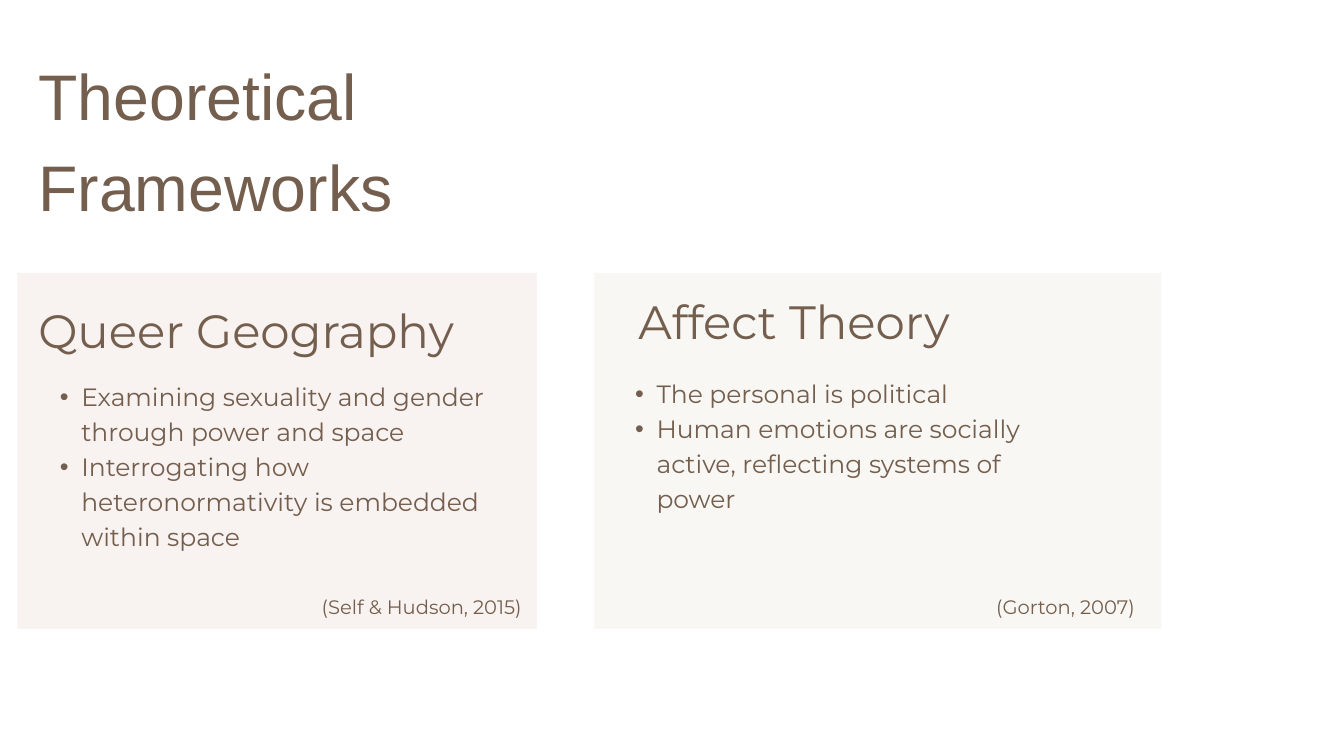
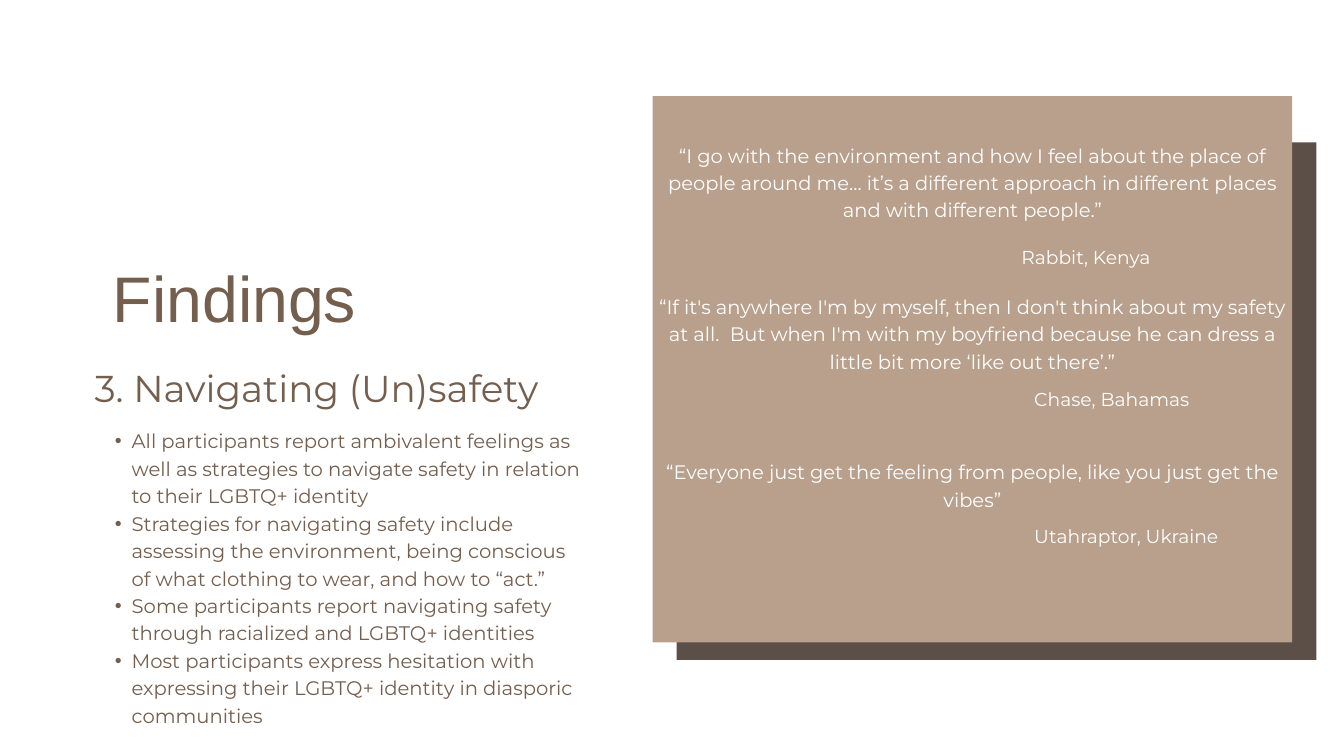
from collections import namedtuple

from lxml import etree
from pptx import Presentation
from pptx.dml.color import RGBColor
from pptx.enum.shapes import MSO_SHAPE
from pptx.enum.text import MSO_ANCHOR, MSO_AUTO_SIZE, PP_ALIGN
from pptx.oxml.ns import qn
from pptx.util import Emu, Pt

RECTANGLE = MSO_SHAPE.RECTANGLE
TOP = MSO_ANCHOR.TOP
NO_AUTOFIT = MSO_AUTO_SIZE.NONE
LEFT, CENTER = PP_ALIGN.LEFT, PP_ALIGN.CENTER

PX = 9144  # 100 px to the inch
PAGE_WIDTH, PAGE_HEIGHT = 2000, 1125
TITLE_ONLY = 5

COLORS = {
    "text": "745E4D",
    "white": "FFFFFF",
    "rose": "F8F2F0",
    "ivory": "F8F7F4",
    "tan": "B8A08C",
    "umber": "5B4F47",
}

# Font, size and line height in points
Style = namedtuple("Style", "font size leading color align", defaults=("text", LEFT))
TITLE = Style("Arial", 69, 96.6)
CARD_HEADING = Style("Montserrat", 50, 70)
CARD_BULLET = Style("Montserrat", 26.8, 37.6)
CITATION = Style("Montserrat", 20.9, 29.3, align=CENTER)
SUBHEADING = Style("Montserrat", 40, 56)
FINDING = Style("Montserrat", 21, 29.4)
QUOTE = Style("Montserrat", 20.9, 29.3, "white", CENTER)
SPEAKER = Style("Montserrat", 20, 28, "white")

Box = namedtuple("Box", "left top width height")


def inside(box, left, top, width, height):
    """Return a box placed relative to the corner of another."""
    return Box(box.left + left, box.top + top, width, height)


def emu(box):
    return [Emu(length * PX) for length in box]


def rgb(name):
    return RGBColor.from_string(COLORS[name])


def add_panel(page, box, color):
    panel = page.shapes.add_shape(RECTANGLE, *emu(box))
    panel.shadow.inherit = False
    panel.fill.solid()
    panel.fill.fore_color.rgb = rgb(color)
    panel.line.fill.background()


def add_bullet(para, indent):
    properties = para._p.get_or_add_pPr()
    properties.set("marL", str(indent * PX))
    properties.set("indent", str(-indent * PX // 2))
    etree.SubElement(properties, qn("a:buFont")).set("typeface", "Arial")
    etree.SubElement(properties, qn("a:buChar")).set("char", "•")


def write(frame, lines, style, indent=0):
    """Fill a text frame with one paragraph a line, bulleted when indented."""
    frame.margin_left = frame.margin_top = 0
    frame.margin_right = frame.margin_bottom = 0
    frame.word_wrap = True
    frame.auto_size = NO_AUTOFIT
    frame.vertical_anchor = TOP
    for number, line in enumerate(lines):
        para = frame.add_paragraph() if number else frame.paragraphs[0]
        para.alignment = style.align
        para.line_spacing = Pt(style.leading)
        para.space_before = para.space_after = Pt(0)
        if indent:
            add_bullet(para, indent)
        span = para.add_run()
        span.text = line
        span.font.name = style.font
        span.font.size = Pt(style.size)
        span.font.color.rgb = rgb(style.color)


def add_text(page, box, lines, style, indent=0):
    write(page.shapes.add_textbox(*emu(box)).text_frame, lines, style, indent)


def add_page(deck, title, box):
    page = deck.slides.add_slide(deck.slide_layouts[TITLE_ONLY])
    holder = page.shapes.title
    holder.left, holder.top, holder.width, holder.height = emu(box)
    write(holder.text_frame, [title], TITLE)
    return page


def add_theory_card(page, box, color, heading, heading_at, bullets, bullets_at,
                    citation, citation_left, citation_width):
    add_panel(page, box, color)
    add_text(page, inside(box, *heading_at, 711, 93), [heading], CARD_HEADING)
    add_text(page, inside(box, *bullets_at, 689, 259), bullets, CARD_BULLET, 64)
    add_text(page, inside(box, citation_left, 473, citation_width, 39),
             [citation], CITATION)


def add_quote_panel(page, box, quotes):
    # Offset backing, then the panel in front of it
    add_panel(page, inside(box, 36, 69, box.width, 770), "umber")
    add_panel(page, box, "tan")
    for quote, quote_top, speaker, speaker_left, speaker_top in quotes:
        add_text(page, inside(box, 0, quote_top, box.width, 120), [quote], QUOTE)
        add_text(page, inside(box, speaker_left, speaker_top, 348, 37),
                 [speaker], SPEAKER)


def build_frameworks(deck):
    page = add_page(deck, "Theoretical Frameworks", Box(57, 65, 689, 262))
    add_theory_card(
        page, Box(26, 406, 773, 530), "rose",
        "Queer Geography", (31, 29),
        ["Examining sexuality and gender through power and space",
         "Interrogating how heteronormativity is embedded within space"], (31, 154),
        "(Self & Hudson, 2015)", 443, 317)
    add_theory_card(
        page, Box(884, 406, 844, 530), "ivory",
        "Affect Theory", (66, 16),
        ["The personal is political",
         "Human emotions are socially active, reflecting systems of power"], (29, 150),
        "(Gorton, 2007)", 574, 255)


def build_findings(deck):
    page = add_page(deck, "Findings", Box(168, 365, 396, 129))
    add_quote_panel(page, Box(971, 143, 952, 813), [
        ("“I go with the environment and how I feel about the place of people "
         "around me… it’s a different approach in different places and with "
         "different people.”", 65, "Rabbit, Kenya", 549, 217),
        ("“If it's anywhere I'm by myself, then I don't think about my safety at "
         "all.  But when I'm with my boyfriend because he can dress a little bit "
         "more ‘like out there’.”", 290, "Chase, Bahamas", 568, 428),
        ("“Everyone just get the feeling from people, like you just get the vibes”",
         536, "Utahraptor, Ukraine", 568, 633),
    ])
    # Theme and its findings
    add_text(page, Box(141, 533, 820, 74), ["3. Navigating (Un)safety"], SUBHEADING)
    add_text(page, Box(146, 633, 723, 445), [
        "All participants report ambivalent feelings as well as strategies to "
        "navigate safety in relation to their LGBTQ+ identity",
        "Strategies for navigating safety include assessing the environment, being "
        "conscious of what clothing to wear, and how to “act.”",
        "Some participants report navigating safety through racialized and LGBTQ+ "
        "identities",
        "Most participants express hesitation with expressing their LGBTQ+ identity "
        "in diasporic communities",
    ], FINDING, 50)


def main():
    deck = Presentation()
    deck.slide_width = Emu(PAGE_WIDTH * PX)
    deck.slide_height = Emu(PAGE_HEIGHT * PX)
    build_frameworks(deck)
    build_findings(deck)
    deck.save("out.pptx")


if __name__ == "__main__":
    main()
